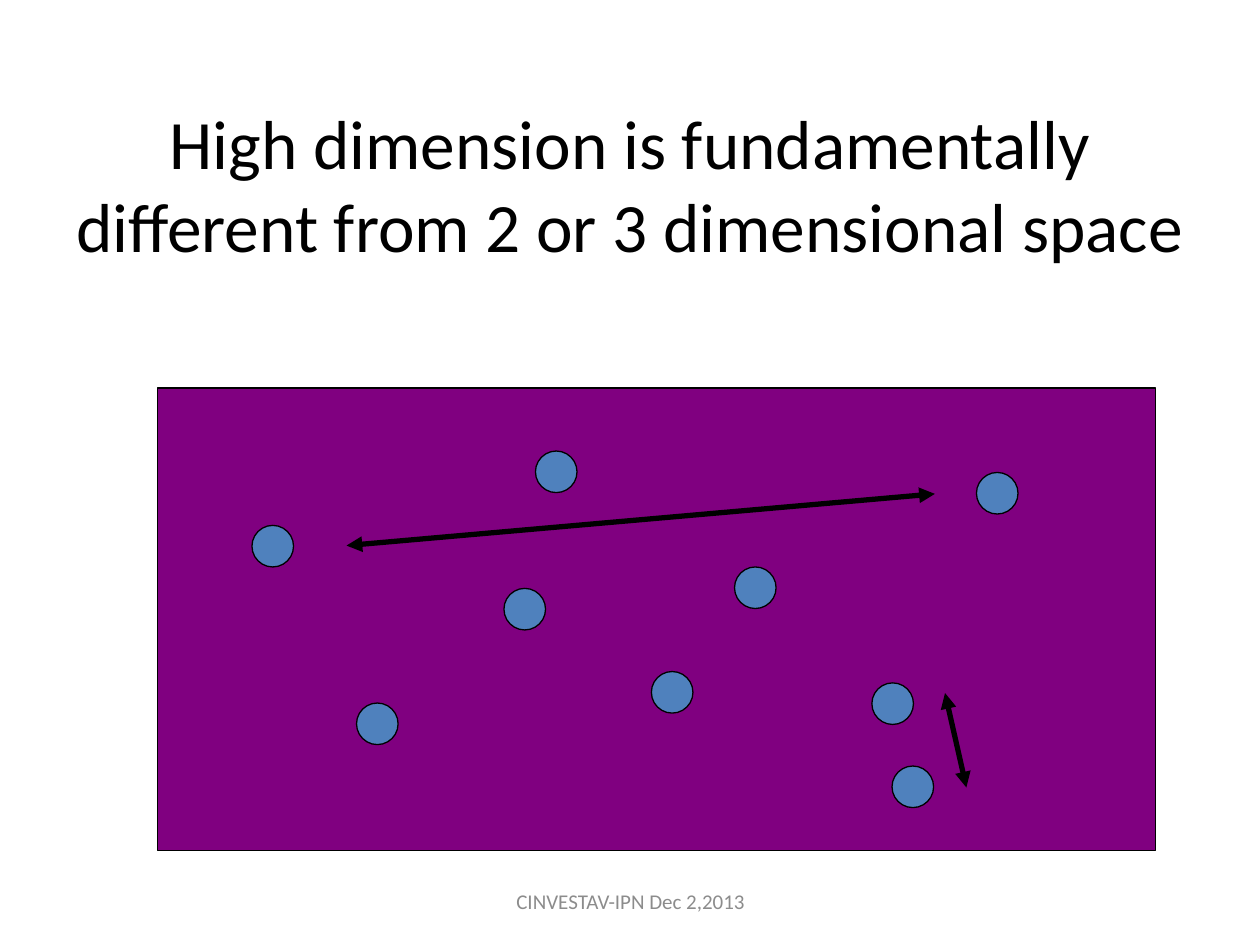
from lxml import etree
from pptx import Presentation
from pptx.dml.color import RGBColor
from pptx.enum import shapes, text
from pptx.oxml.ns import qn
from pptx.util import Inches, Pt

BLACK, PURPLE, BLUE, GRAY = "000000", "800080", "4F81BD", "8C8C8C"
DOT_SIZE = 0.33
# Offsets in inches from the top left corner of the space
DOTS = [(0.75, 1.09), (3, 0.5), (2.75, 1.59), (1.58, 2.5), (3.92, 2.25),
        (4.58, 1.42), (5.67, 2.34), (5.83, 3), (6.5, 0.67)]
DISTANCES = [((1.5, 1.25), (6.17, 0.84)), ((6.25, 2.42), (6.42, 3.17))]


def color(hex_string):
    return RGBColor.from_string(hex_string)


def write_text(frame, words, size, hex_string):
    frame.word_wrap = True
    frame.auto_size = text.MSO_AUTO_SIZE.NONE
    frame.vertical_anchor = text.MSO_ANCHOR.MIDDLE
    paragraph = frame.paragraphs[0]
    paragraph.alignment = text.PP_ALIGN.CENTER
    run = paragraph.add_run()
    run.text = words
    run.font.name = "Calibri"
    run.font.size = Pt(size)
    run.font.color.rgb = color(hex_string)


def add_title(slide, left, top, width, height):
    title = slide.shapes.title
    title.left, title.top = Inches(left), Inches(top)
    title.width, title.height = Inches(width), Inches(height)
    write_text(title.text_frame,
               "High dimension is fundamentally different from 2 or 3 dimensional space",
               39.6, BLACK)


def add_outlined(slide, kind, left, top, width, height, fill):
    shape = slide.shapes.add_shape(
        kind, Inches(left), Inches(top), Inches(width), Inches(height))
    shape.shadow.inherit = False
    shape.fill.solid()
    shape.fill.fore_color.rgb = color(fill)
    shape.line.color.rgb = color(BLACK)
    shape.line.width = Pt(0.75)


def add_double_arrow(slide, start_x, start_y, end_x, end_y):
    arrow = slide.shapes.add_connector(
        shapes.MSO_CONNECTOR.STRAIGHT,
        Inches(start_x), Inches(start_y), Inches(end_x), Inches(end_y))
    arrow.line.color.rgb = color(BLACK)
    arrow.line.width = Pt(3)
    properties = arrow._element.spPr
    line = properties.find(qn("a:ln"))
    for end in ("a:headEnd", "a:tailEnd"):
        etree.SubElement(line, qn(end), type="triangle")
    etree.SubElement(properties, qn("a:effectLst"))


def add_space(slide, left, top, width, height):
    """Draw the space with its scattered points and the distances between them."""
    add_outlined(slide, shapes.MSO_SHAPE.RECTANGLE, left, top, width, height, PURPLE)
    for x, y in DOTS:
        add_outlined(slide, shapes.MSO_SHAPE.OVAL, left + x, top + y,
                     DOT_SIZE, DOT_SIZE, BLUE)
    for (start_x, start_y), (end_x, end_y) in DISTANCES:
        add_double_arrow(slide, left + start_x, top + start_y,
                         left + end_x, top + end_y)


def add_footer(slide, left, top, width, height):
    footer = slide.shapes.add_textbox(
        Inches(left), Inches(top), Inches(width), Inches(height))
    write_text(footer.text_frame, "CINVESTAV-IPN Dec 2,2013", 12, GRAY)


def main():
    presentation = Presentation()
    presentation.slide_width, presentation.slide_height = Inches(10), Inches(7.5)
    slide = presentation.slides.add_slide(presentation.slide_layouts[5])
    add_title(slide, 0.5, 0.94, 9, 1.03)
    add_space(slide, 1.25, 3.08, 7.92, 3.67)
    add_footer(slide, 3.42, 6.95, 3.17, 0.4)
    presentation.save("out.pptx")


if __name__ == "__main__":
    main()
